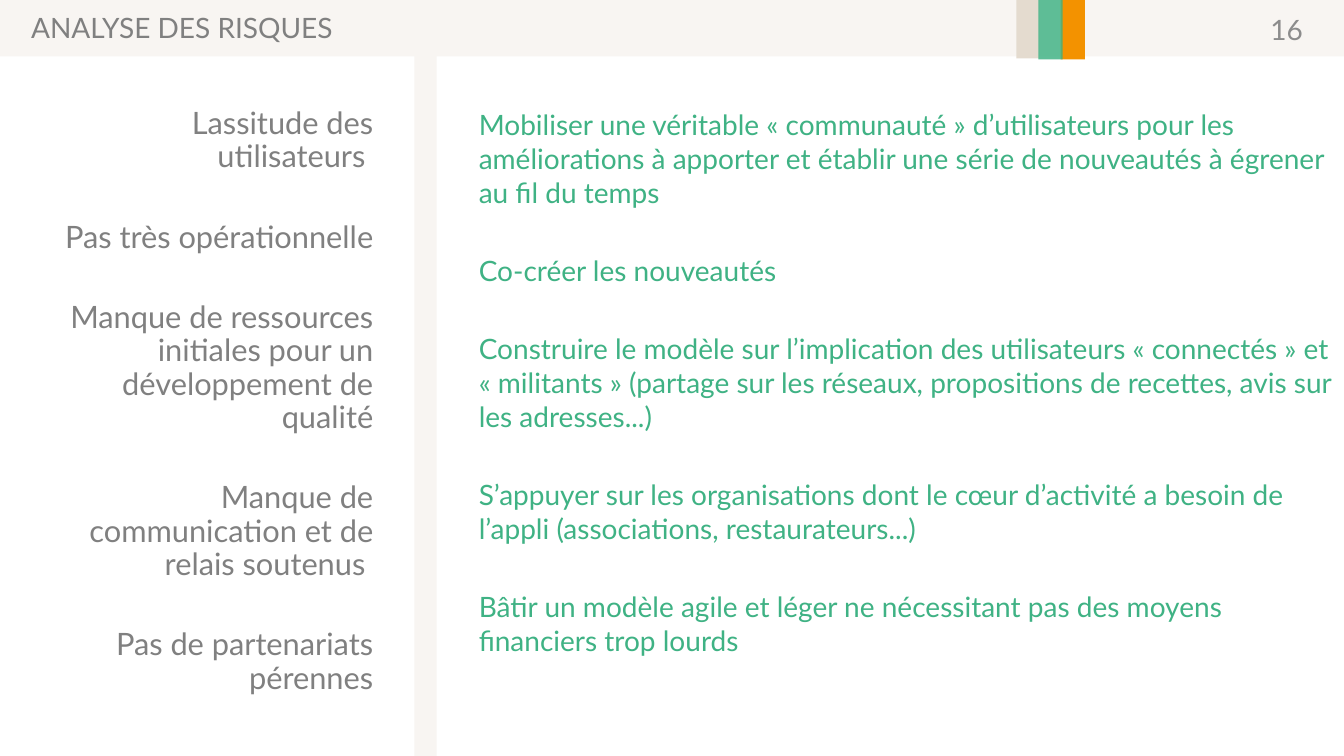
from lxml.etree import SubElement
from pptx import Presentation
from pptx.dml.color import RGBColor
from pptx.enum.shapes import MSO_SHAPE
from pptx.enum.text import MSO_ANCHOR, PP_ALIGN
from pptx.oxml.ns import qn
from pptx.util import Inches, Pt

SAND = RGBColor(0xE4, 0xDB, 0xCF)
GREEN = RGBColor(0x3F, 0xB2, 0x84)
ORANGE = RGBColor(0xF3, 0x92, 0x00)
GREY = RGBColor(0x80, 0x80, 0x80)
LIGHT_GREY = RGBColor(0x8C, 0x8C, 0x8C)

SLIDE_WIDTH, SLIDE_HEIGHT = 13.33, 7.5
HEADER_HEIGHT = 0.58

RISKS = [
    "Lassitude des utilisateurs ",
    "Pas très opérationnelle ",
    "Manque de ressources initiales pour un développement de qualité",
    "Manque de communication et de relais soutenus ",
    "Pas de partenariats pérennes",
]
RESPONSES = [
    "Mobiliser une véritable « communauté » d’utilisateurs pour les "
    "améliorations à apporter et établir une série de nouveautés à égrener au fil du temps",
    "Co-créer les nouveautés",
    "Construire le modèle sur l’implication des utilisateurs « connectés » et "
    "« militants » (partage sur les réseaux, propositions de recettes, avis sur les adresses...)",
    "S’appuyer sur les organisations dont le cœur d’activité a besoin de l’appli "
    "(associations, restaurateurs...)",
    "Bâtir un modèle agile et léger ne nécessitant pas des moyens financiers trop lourds",
]


def add_band(slide, box, color, opacity=100):
    band = slide.shapes.add_shape(MSO_SHAPE.RECTANGLE, *map(Inches, box))
    band.shadow.inherit = False
    band.line.fill.background()
    band.fill.solid()
    band.fill.fore_color.rgb = color
    if opacity < 100:
        srgb = band.fill._xPr.find(".//" + qn("a:srgbClr"))
        SubElement(srgb, qn("a:alpha"), val=str(opacity * 1000))


def add_text(slide, box, paragraphs, size, color, align=PP_ALIGN.LEFT,
             line_spacing=1.0, gap=0, anchor=MSO_ANCHOR.TOP):
    frame = slide.shapes.add_textbox(*map(Inches, box)).text_frame
    frame.word_wrap = True
    frame.vertical_anchor = anchor
    for index, text in enumerate(paragraphs):
        paragraph = frame.add_paragraph() if index else frame.paragraphs[0]
        paragraph.text = text
        paragraph.alignment = align
        paragraph.line_spacing = line_spacing
        paragraph.space_before = Pt(gap if index else 0)
        paragraph.font.name = "Lato"
        paragraph.font.size = Pt(size)
        paragraph.font.color.rgb = color


def add_header(slide, left, top, width, height):
    add_band(slide, (left, top - 0.02, width, height), SAND, 26)
    add_text(slide, (left + 0.21, top + 0.09, 4.94, 0.4), ["ANALYSE DES RISQUES"],
             20, GREY, line_spacing=0.9)
    add_text(slide, (left + width - 1.13, top + 0.09, 0.82, 0.4), ["16"],
             20, LIGHT_GREY, PP_ALIGN.RIGHT, anchor=MSO_ANCHOR.MIDDLE)
    add_band(slide, (left + 10.08, top, 0.23, height), SAND)
    add_band(slide, (left + 10.52, top - 0.01, 0.24, height + 0.02), ORANGE)
    add_band(slide, (left + 10.3, top - 0.01, 0.24, height + 0.02), GREEN, 83)


def add_risk_columns(slide, left, top, width, height):
    add_band(slide, (left + 4.11, top, 0.22, height), SAND, 26)
    add_text(slide, (left + 0.5, top + 0.46, 3.3, 6.04), RISKS,
             22, GREY, PP_ALIGN.RIGHT, line_spacing=0.9, gap=33.75)
    add_text(slide, (left + 4.65, top + 0.46, width - 4.65, 5.45), RESPONSES,
             20, GREEN, gap=32)


def main():
    deck = Presentation()
    deck.slide_width = Inches(SLIDE_WIDTH)
    deck.slide_height = Inches(SLIDE_HEIGHT)
    slide = deck.slides.add_slide(deck.slide_layouts[6])
    body_top = HEADER_HEIGHT - 0.02
    add_risk_columns(slide, 0, body_top, SLIDE_WIDTH, SLIDE_HEIGHT - body_top)
    add_header(slide, 0, 0, SLIDE_WIDTH, HEADER_HEIGHT)
    deck.save("out.pptx")


if __name__ == "__main__":
    main()
